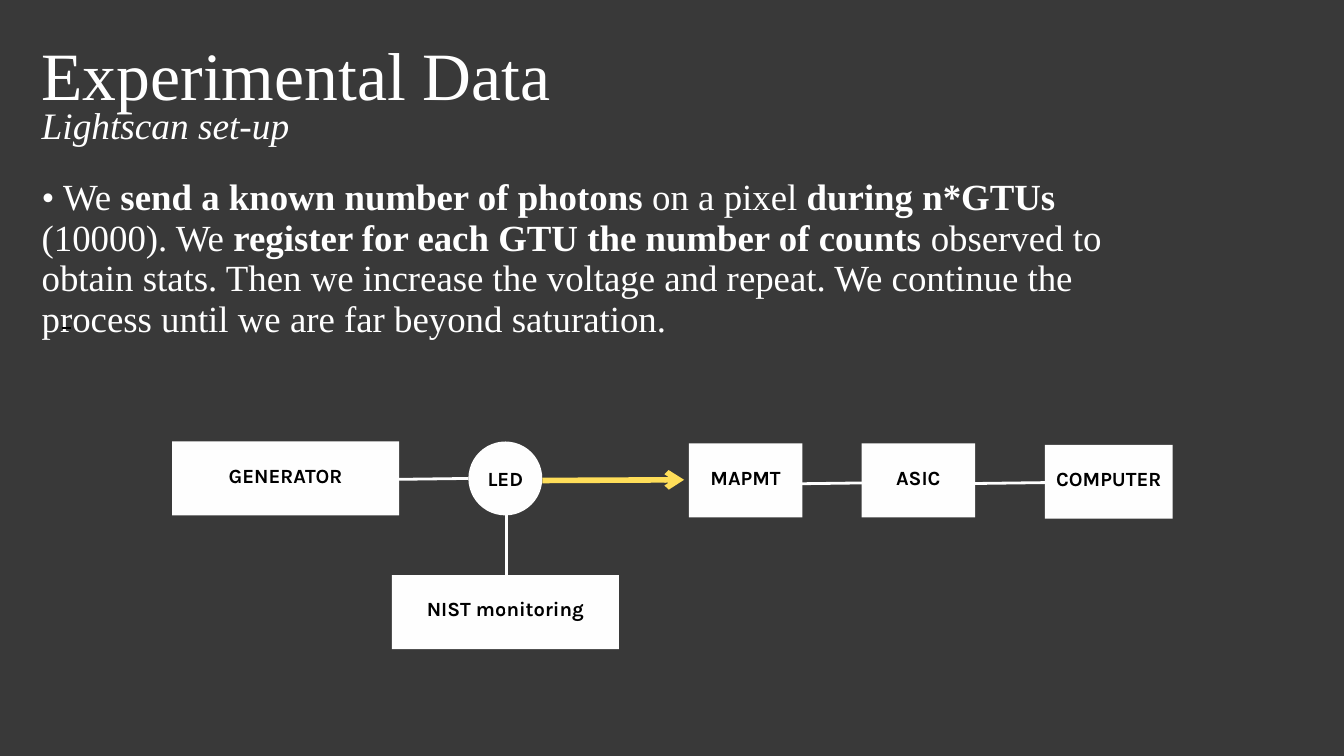
from pptx import Presentation
from pptx.dml.color import RGBColor
from pptx.enum.shapes import MSO_CONNECTOR, MSO_SHAPE
from pptx.enum.text import MSO_ANCHOR, PP_ALIGN
from pptx.oxml.ns import qn
from pptx.util import Inches, Pt
from lxml.etree import SubElement

THEME = dict(
    back="393939", text="FFFFFF", box="FEFEFE", label="000000", beam="FFDE59",
    serif="Times New Roman", sans="Karla",
    title=72.5, sub=40, body=39.5, tag=21.6,
)
WIDE, HIGH = 20, 11.25
LEFT = 0.62
TALL = 1.1   # height of every block
PAD = 0.06
LIFT = 0.16  # extra bottom inset that raises a box label

TITLE = [("Experimental Data", False)]
SUB = [("Lightscan set-up", False)]
BODY = [  # text, bold
    ("• We ", False),
    ("send a known number of photons", True),
    (" on a pixel ", False),
    ("during n*GTUs", True),
    (" (10000). We ", False),
    ("register for each GTU the number of counts", True),
    (" observed to obtain stats. Then we increase the voltage and repeat. "
     "We continue the process until we are far beyond saturation.", False),
]
BLOCKS = [  # label, left, top, width, preset, lift
    ("GENERATOR", 2.56, 6.57, 3.38, MSO_SHAPE.RECTANGLE, LIFT),
    ("LED", 6.97, 6.57, TALL, MSO_SHAPE.OVAL, 0.05),
    ("NIST monitoring", 5.83, 8.56, 3.38, MSO_SHAPE.RECTANGLE, LIFT),
    ("MAPMT", 10.25, 6.6, 1.69, MSO_SHAPE.RECTANGLE, LIFT),
    ("ASIC", 12.82, 6.6, 1.69, MSO_SHAPE.RECTANGLE, LIFT),
    ("COMPUTER", 15.55, 6.62, 1.9, MSO_SHAPE.RECTANGLE, LIFT),
]
WIRES = [  # start, end, colour, points, arrow
    ((0.92, 4.88), (1.06, 4.88), "label", 1.5, False),
    ((5.41, 7.14), (6.97, 7.12), "box", 3, False),
    ((8.07, 7.15), (10.18, 7.14), "beam", 6, True),
    ((7.54, 9.11), (7.54, 7.56), "box", 3, False),
    ((11.79, 7.2), (13.34, 7.18), "box", 3, False),
    ((14.12, 7.2), (15.67, 7.18), "box", 3, False),
]


def tint(name):
    return RGBColor.from_string(THEME[name])


def write(shape, runs, *, size, lead, font="serif", color="text", italic=False,
          align=PP_ALIGN.LEFT, anchor=MSO_ANCHOR.TOP, pad=0, lift=0):
    frame = shape.text_frame
    frame.word_wrap = True
    frame.vertical_anchor = anchor
    frame.margin_left = frame.margin_right = frame.margin_top = Inches(pad)
    frame.margin_bottom = Inches(pad + lift)
    para = frame.paragraphs[0]
    para.alignment = align
    para.line_spacing = Pt(lead)
    for text, bold in runs:
        run = para.add_run()
        run.text = text
        face = run.font
        face.name, face.size = THEME[font], Pt(THEME[size])
        face.bold, face.italic = bold, italic
        face.color.rgb = tint(color)


def add_text(slide, runs, top, width, height, **style):
    area = map(Inches, (LEFT, top, width, height))
    write(slide.shapes.add_textbox(*area), runs, **style)


def add_block(slide, label, left, top, width, preset, lift):
    area = map(Inches, (left, top, width, TALL))
    block = slide.shapes.add_shape(preset, *area)
    block.shadow.inherit = False
    block.fill.solid()
    block.fill.fore_color.rgb = tint("box")
    block.line.fill.background()
    write(block, [(label, True)], size="tag", lead=30.2, font="sans",
          color="label", align=PP_ALIGN.CENTER, anchor=MSO_ANCHOR.MIDDLE,
          pad=PAD, lift=lift)


def add_wire(slide, start, end, color, points, arrow):
    ends = map(Inches, start + end)
    wire = slide.shapes.add_connector(MSO_CONNECTOR.STRAIGHT, *ends)
    wire.line.color.rgb = tint(color)
    wire.line.width = Pt(points)
    if arrow:
        SubElement(wire.line._get_or_add_ln(), qn("a:tailEnd"), type="arrow")
    SubElement(wire._element.spPr, qn("a:effectLst"))


def main():
    deck = Presentation()
    deck.slide_width, deck.slide_height = Inches(WIDE), Inches(HIGH)
    slide = deck.slides.add_slide(deck.slide_layouts[6])
    slide.background.fill.solid()
    slide.background.fill.fore_color.rgb = tint("back")

    add_text(slide, BODY, 2.64, 16.7, 2.4, size="body", lead=43.5)
    add_text(slide, TITLE, 0.59, 12.81, 1.14, size="title", lead=79.8)
    add_text(slide, SUB, 1.57, 10.79, 0.63, size="sub", lead=44, italic=True)
    for block in BLOCKS:
        add_block(slide, *block)
    for wire in WIRES:
        add_wire(slide, *wire)
    deck.save("out.pptx")


if __name__ == "__main__":
    main()
